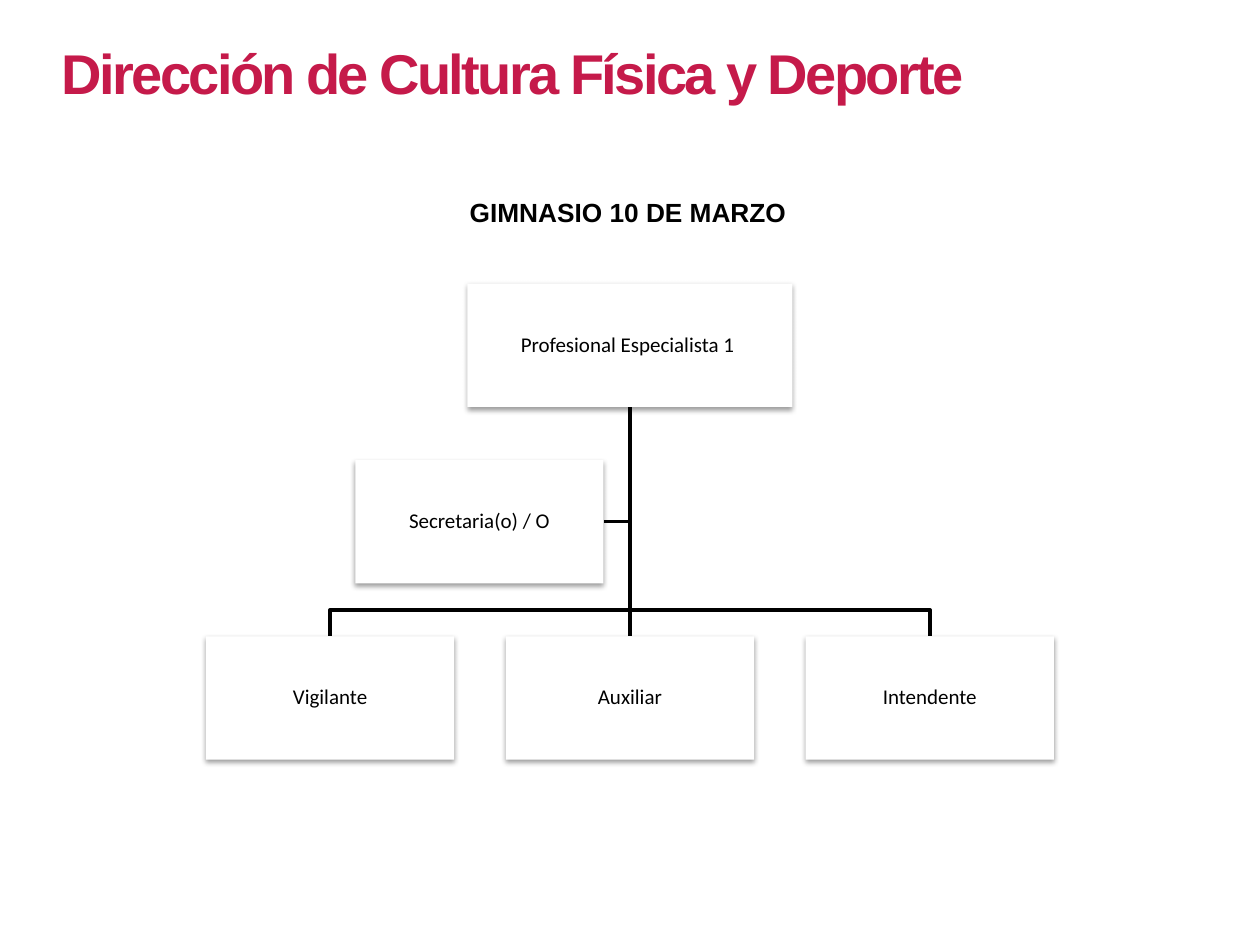
from lxml import etree
from pptx import Presentation
from pptx.dml.color import RGBColor
from pptx.enum.shapes import MSO_CONNECTOR, MSO_SHAPE
from pptx.enum.text import MSO_ANCHOR, PP_ALIGN
from pptx.oxml.ns import qn
from pptx.util import Inches, Pt

BLACK, WHITE, CRIMSON = "000000", "FFFFFF", "C51A4A"
BOX_W, BOX_H = 1.97, 0.98
HEAD_W = 2.58
ROW_GAP = 0.42
COLUMN_STEP = 2.38
STUB = 0.21  # length of the short branch beside or above a box


def color(hex_string):
    return RGBColor.from_string(hex_string)


def add_heading(slide, text, left, top, width, height, size, hex_string, wrap, spacing=0):
    heading = slide.shapes.add_textbox(*map(Inches, (left, top, width, height)))
    heading.text_frame.word_wrap = wrap
    paragraph = heading.text_frame.paragraphs[0]
    paragraph.text = text
    font = paragraph.font
    font.name, font.size, font.bold = "Arial", Pt(size), True
    font.color.rgb = color(hex_string)
    if spacing:
        run_properties = paragraph.runs[0].font._element
        run_properties.set("spc", str(int(spacing * 100)))


def add_soft_shadow(shape):
    shape.shadow.inherit = False
    effects = shape._element.spPr.find(qn("a:effectLst"))
    shadow = etree.SubElement(effects, qn("a:outerShdw"), blurRad=str(Pt(3.1)),
                              dist=str(Pt(1.6)), dir="5400000", rotWithShape="0")
    tint = etree.SubElement(shadow, qn("a:srgbClr"), val=BLACK)
    etree.SubElement(tint, qn("a:alpha"), val="38000")


def add_post(slide, text, center, top, width=BOX_W):
    """Place one position of the chart, centred on the given x."""
    post = slide.shapes.add_shape(MSO_SHAPE.RECTANGLE, Inches(center - width / 2),
                                  Inches(top), Inches(width), Inches(BOX_H))
    post.fill.solid()
    post.fill.fore_color.rgb = color(WHITE)
    post.line.fill.background()
    add_soft_shadow(post)
    frame = post.text_frame
    frame.word_wrap = True
    frame.vertical_anchor = MSO_ANCHOR.MIDDLE
    frame.margin_left = frame.margin_right = Inches(0.01)
    frame.margin_top = frame.margin_bottom = Inches(0.01)
    paragraph = frame.paragraphs[0]
    paragraph.text = text
    paragraph.alignment = PP_ALIGN.CENTER
    paragraph.line_spacing = 0.9
    paragraph.font.name, paragraph.font.size = "Calibri", Pt(12)
    paragraph.font.color.rgb = color(BLACK)


def style_branch(branch):
    branch.line.color.rgb = color(BLACK)
    branch.line.width = Pt(2)


def add_branch(slide, points):
    """Draw a straight connector, or an open outline when the branch bends."""
    corners = [(Inches(x), Inches(y)) for x, y in points]
    if len(corners) == 2:
        branch = slide.shapes.add_connector(MSO_CONNECTOR.STRAIGHT, *corners[0], *corners[1])
        etree.SubElement(branch._element.spPr, qn("a:effectLst"))
    else:
        builder = slide.shapes.build_freeform(*corners[0])
        builder.add_line_segments(corners[1:], close=False)
        branch = builder.convert_to_shape()
        branch.fill.background()
        branch.shadow.inherit = False
    style_branch(branch)


def add_org_chart(slide, center, top, head, assistant, staff):
    head_bottom = top + BOX_H
    assistant_top = head_bottom + ROW_GAP
    staff_top = assistant_top + BOX_H + ROW_GAP
    assistant_y = assistant_top + BOX_H / 2
    rail_y = staff_top - STUB
    middle = (len(staff) - 1) / 2
    columns = [center + (i - middle) * COLUMN_STEP for i in range(len(staff))]

    # Branches, behind the boxes
    start = (center, head_bottom)
    add_branch(slide, [start, (center, assistant_y), (center - STUB, assistant_y)])
    for x in columns:
        bend = [] if x == center else [(center, rail_y), (x, rail_y)]
        add_branch(slide, [start, *bend, (x, staff_top)])

    # Boxes
    add_post(slide, head, center, top, HEAD_W)
    for name, x in zip(staff, columns):
        add_post(slide, name, x, staff_top)
    add_post(slide, assistant, center - STUB - BOX_W / 2, assistant_top)


def main():
    presentation = Presentation()
    presentation.slide_width, presentation.slide_height = Inches(10), Inches(7.5)
    slide = presentation.slides.add_slide(presentation.slide_layouts[6])

    # Headings
    add_heading(slide, "GIMNASIO 10 DE MARZO", 3.63, 1.51, 2.74, 0.35, 15, BLACK, False)
    add_heading(slide, "Dirección de Cultura Física y Deporte",
                0.39, 0.26, 7.69, 0.64, 32, CRIMSON, True, spacing=-1.5)

    # Organisation chart
    add_org_chart(slide, 5, 2.25, "Profesional Especialista 1 ", "Secretaria(o) / O",
                  ["Vigilante", "Auxiliar", "Intendente"])
    presentation.save("out.pptx")


if __name__ == "__main__":
    main()
